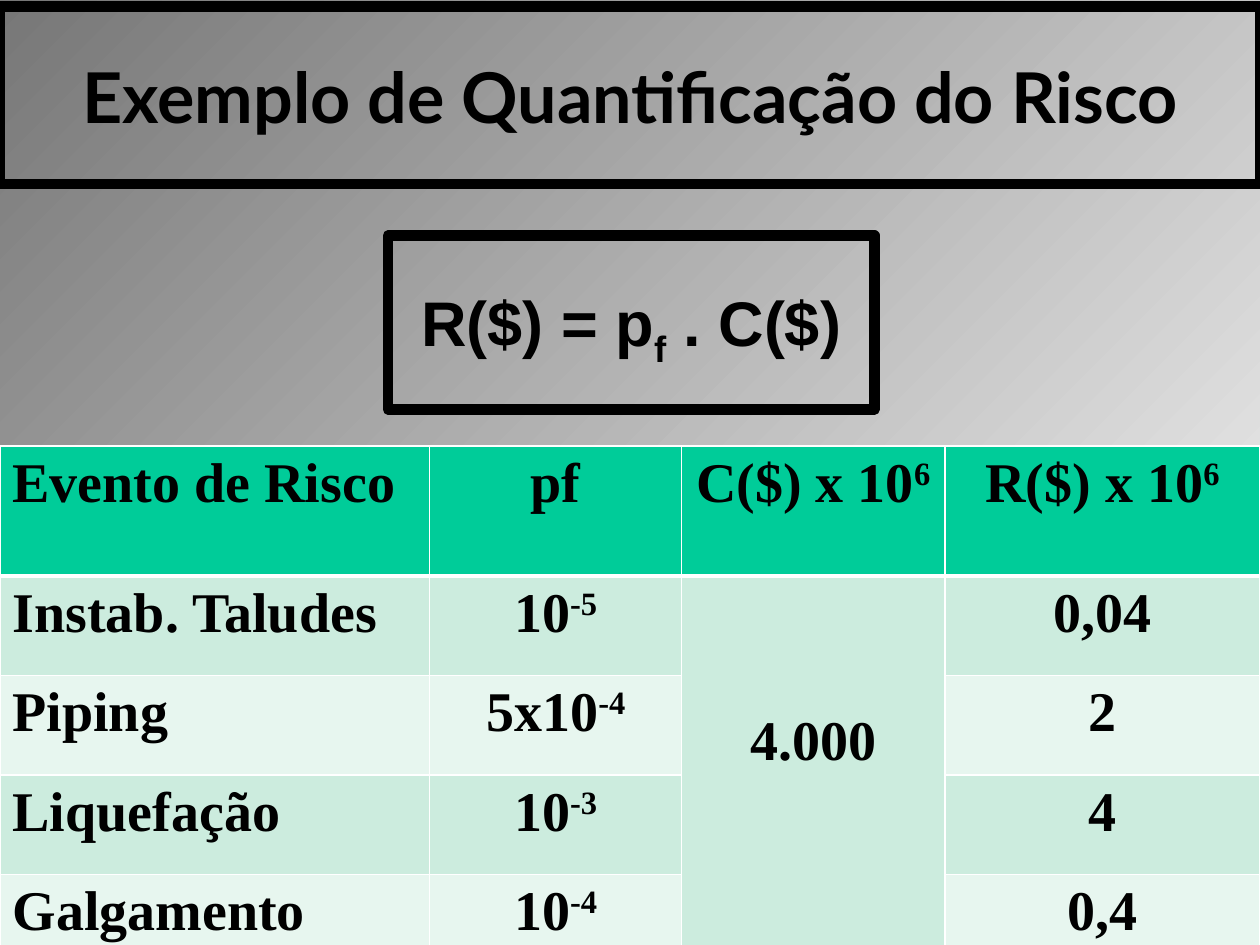
import pptx
import pptx.dml.color
import pptx.enum.shapes
import pptx.enum.text
import pptx.oxml
import pptx.oxml.ns
import pptx.util
from pptx.util import Inches

RGBColor = pptx.dml.color.RGBColor
ALIGN = pptx.enum.text.PP_ALIGN
ANCHOR = pptx.enum.text.MSO_ANCHOR

BLACK = RGBColor(0x00, 0x00, 0x00)
WHITE = RGBColor(0xFF, 0xFF, 0xFF)
GRADIENT = (RGBColor(0x77, 0x77, 0x77), RGBColor(0xFE, 0xFE, 0xFE))
HEADER_GREEN = RGBColor(0x00, 0xCC, 0x99)
BANDS = (RGBColor(0xCC, 0xEC, 0xDE), RGBColor(0xE7, 0xF6, 0xEF))

# Each cell is a list of (text, baseline percent) runs
SUPER, SUB = 30, -25
HEADER = [[("Evento de Risco", 0)], [("pf", 0)],
          [("C($) x 10", 0), ("6", SUPER)], [("R($) x 10", 0), ("6", SUPER)]]
EVENTS = [("Instab. Taludes", "10", "-5", "0,04"),
          ("Piping", "5x10", "-4", "2"),
          ("Liquefação", "10", "-3", "4"),
          ("Galgamento", "10", "-4", "0,4")]
CONSEQUENCE = "4.000"
COLUMN_WIDTHS = (3.41, 2, 2.09, 2.5)
HEADER_HEIGHT, ROW_HEIGHT = 1.03, 0.79


def write_text(text_frame, runs, font, size, align=ALIGN.CENTER, color=BLACK):
    """Fill the first paragraph with (text, baseline percent) runs."""
    paragraph = text_frame.paragraphs[0]
    paragraph.alignment = align
    for text, baseline in runs:
        run = paragraph.add_run()
        run.text = text
        run.font.name = font
        run.font.size = pptx.util.Pt(size)
        run.font.bold = True
        run.font.color.rgb = color
        if baseline:
            run.font._element.set("baseline", str(baseline * 1000))


def set_borders(cell, **widths):
    """Draw white borders; the keywords L, R, T and B give widths in points."""
    properties = cell._tc.get_or_add_tcPr()
    for side, width in widths.items():
        properties.append(pptx.oxml.parse_xml(
            f'<a:ln{side} {pptx.oxml.ns.nsdecls("a")} w="{pptx.util.Pt(width)}">'
            f'<a:solidFill><a:srgbClr val="{WHITE}"/></a:solidFill></a:ln{side}>'))


class RiskSlide:
    title_font = "Lato"
    formula_font = "Arial"
    table_font = "Times New Roman"
    frame_width = 6

    def __init__(self, presentation):
        self.slide = presentation.slides.add_slide(presentation.slide_layouts[6])

    def background(self, colors):
        fill = self.slide.background.fill
        fill.gradient()
        fill.gradient_angle = 315
        for stop, color in zip(fill.gradient_stops, colors):
            stop.color.rgb = color

    def frame(self, left, top, width, height, runs, font, size, margin_top=0.05):
        shape = self.slide.shapes.add_shape(
            pptx.enum.shapes.MSO_SHAPE.RECTANGLE,
            Inches(left), Inches(top), Inches(width), Inches(height))
        shape.shadow.inherit = False
        shape.fill.background()
        shape.line.color.rgb = BLACK
        shape.line.width = pptx.util.Pt(self.frame_width)
        text_frame = shape.text_frame
        text_frame.word_wrap = True
        text_frame.vertical_anchor = ANCHOR.MIDDLE
        text_frame.margin_top = Inches(margin_top)
        write_text(text_frame, runs, font, size)

    def table(self, left, top, rows):
        height = HEADER_HEIGHT + ROW_HEIGHT * (len(rows) - 1)
        table = self.slide.shapes.add_table(
            len(rows), len(COLUMN_WIDTHS), Inches(left), Inches(top),
            Inches(sum(COLUMN_WIDTHS)), Inches(height)).table
        table.horz_banding = False
        for column, width in zip(table.columns, COLUMN_WIDTHS):
            column.width = Inches(width)
        for i, row in enumerate(rows):
            table.rows[i].height = Inches(ROW_HEIGHT if i else HEADER_HEIGHT)
            for j, runs in enumerate(row):
                cell = table.cell(i, j)
                set_borders(cell, L=1, R=1, T=3 if i == 1 else 1, B=1 if i else 3)
                cell.fill.solid()
                cell.fill.fore_color.rgb = BANDS[(i - 1) % 2] if i else HEADER_GREEN
                write_text(cell.text_frame, runs, self.table_font, 32,
                           align=ALIGN.CENTER if j else ALIGN.LEFT)
        return table


def main():
    presentation = pptx.Presentation()
    presentation.slide_width = Inches(10)
    presentation.slide_height = Inches(7.5)
    risk = RiskSlide(presentation)
    risk.background(GRADIENT)

    # Title and formula
    risk.frame(0, 0.05, 10, 1.41, [("Exemplo de Quantificação do Risco", 0)],
               risk.title_font, 40)
    risk.frame(3.08, 1.87, 3.86, 1.38,
               [("R($) = p", 0), ("f", SUB), (" . C($)", 0)],
               risk.formula_font, 36, margin_top=0.11)

    # Risk table, with one consequence shared by all events
    rows = [HEADER]
    for index, (event, base, exponent, value) in enumerate(EVENTS):
        shared = [] if index else [(CONSEQUENCE, 0)]
        rows.append([[(event, 0)], [(base, 0), (exponent, SUPER)],
                     shared, [(value, 0)]])
    table = risk.table(0, 3.54, rows)
    consequence_cell = table.cell(1, 2)
    consequence_cell.merge(table.cell(len(EVENTS), 2))
    consequence_cell.margin_top = Inches(1.07)

    presentation.save("out.pptx")


if __name__ == "__main__":
    main()
